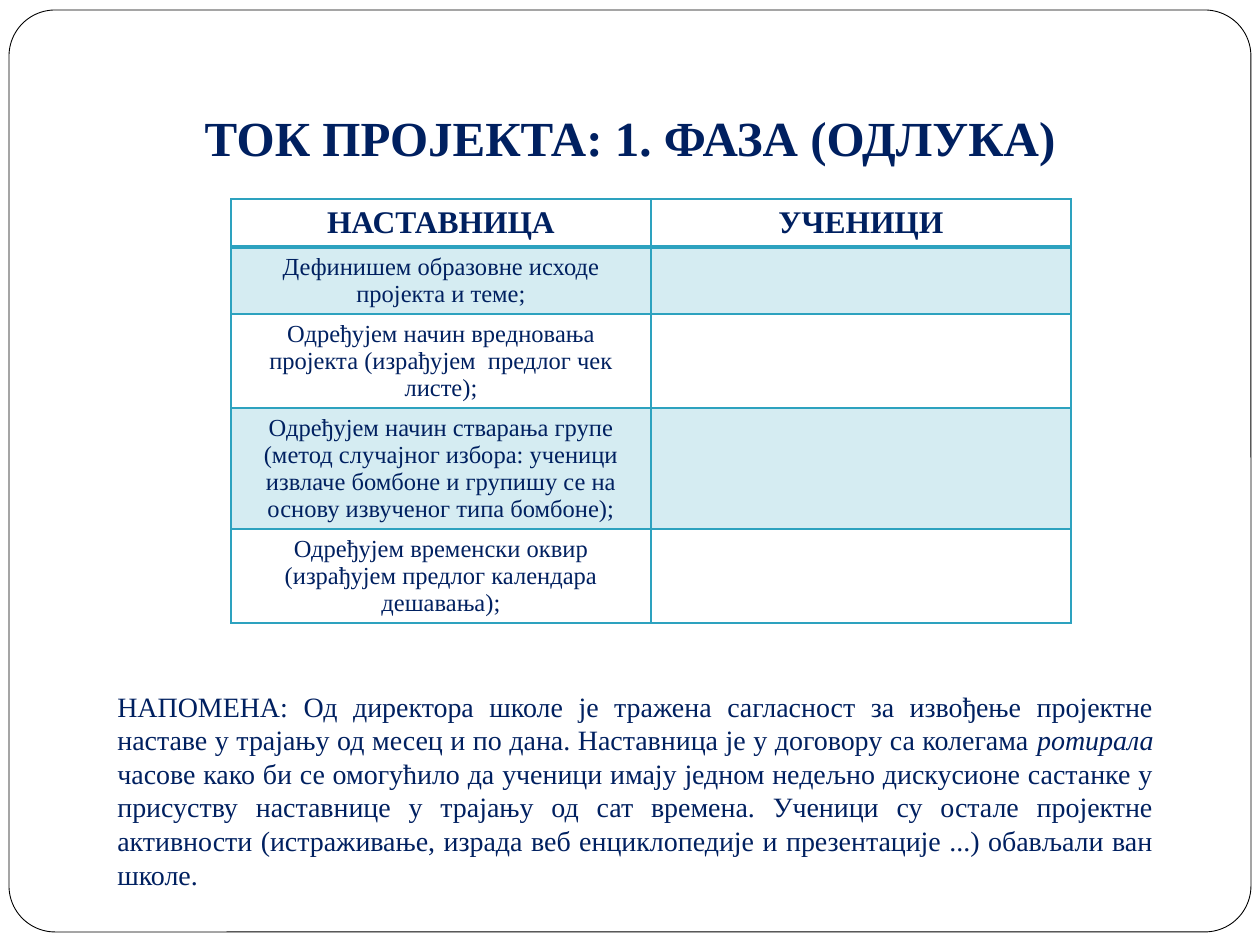
"""Build the slide on the decision phase of a school project."""
from dataclasses import dataclass

from lxml import etree
from pptx import Presentation
from pptx import util as u
from pptx.dml.color import RGBColor
from pptx.enum import shapes, text
from pptx.oxml.ns import qn

TITLE = "ТОК ПРОЈЕКТА: 1. ФАЗА (ОДЛУКА)"
HEADS = ["НАСТАВНИЦА", "УЧЕНИЦИ"]
TASKS = [
    "Дефинишем образовне исходе пројекта и теме;",
    "Одређујем начин вредновања пројекта (израђујем  предлог чек листе);",
    "Одређујем начин стварања групе (метод случајног избора: ученици "
    "извлаче бомбоне и групишу се на основу извученог типа бомбоне);",
    "Одређујем временски оквир (израђујем предлог календара дешавања);",
]
NOTE = [
    ("НАПОМЕНА: Од директора школе је тражена сагласност за извођење "
     "пројектне наставе у трајању од месец и по дана. Наставница је у "
     "договору са колегама ", False),
    ("ротирала ", True),
    ("часове како би се омогућило да ученици имају једном недељно "
     "дискусионе састанке у присуству наставнице у трајању од сат времена. "
     "Ученици су остале пројектне активности (истраживање, израда веб "
     "енциклопедије и презентације ...) обављали ван школе.", False),
]
HEIGHTS = [48, 67, 94, 120, 94]
FRAME = (9, 10, 1242, 922)
HEAD = (63, 38, 1134, 141)
GRID = (231, 199, 840, sum(HEIGHTS))
FOOT = (105, 683, 1061, 217)


@dataclass(frozen=True)
class Theme:
    font: str = "Times New Roman"
    ink: str = "002060"
    teal: str = "2DA2BF"
    paper: str = "FFFFFF"
    edge: str = "000000"
    title: int = 28
    head: int = 18
    body: int = 14
    note: int = 16


T = Theme()


def px(n):
    return u.Emu(round(n * 914400 / 126))


def box(spot):
    return [px(n) for n in spot]


def style(para, size, align, bold=False):
    para.alignment = align
    font = para.font
    font.name, font.size, font.bold = T.font, u.Pt(size), bold
    font.color.rgb = RGBColor.from_string(T.ink)


def tint(cell):
    cell.fill.solid()
    cell.fill.fore_color.rgb = RGBColor.from_string(T.teal)
    color = cell._tc.tcPr.find(".//" + qn("a:srgbClr"))
    etree.SubElement(color, qn("a:alpha"), val="20000")


def border(cell, widths):
    for i, (side, width) in enumerate(widths.items()):
        line = etree.Element(qn("a:ln" + side), w=str(u.Pt(width)))
        fill = etree.SubElement(line, qn("a:solidFill"))
        etree.SubElement(fill, qn("a:srgbClr"), val=T.teal)
        cell._tc.get_or_add_tcPr().insert(i, line)


def add_frame(slide):
    frame = slide.shapes.add_shape(
        shapes.MSO_SHAPE.ROUNDED_RECTANGLE, *box(FRAME))
    frame.adjustments[0] = 0.05
    frame.shadow.inherit = False
    frame.fill.solid()
    frame.fill.fore_color.rgb = RGBColor.from_string(T.paper)
    frame.line.color.rgb = RGBColor.from_string(T.edge)
    frame.line.width = u.Pt(0.5)
    slide.shapes._spTree.insert(2, frame._element)


def add_title(slide):
    title = slide.shapes.title
    title.left, title.top, title.width, title.height = box(HEAD)
    frame = title.text_frame
    frame.text = TITLE
    frame.auto_size = text.MSO_AUTO_SIZE.NONE
    frame.vertical_anchor = text.MSO_ANCHOR.BOTTOM
    frame.margin_bottom = u.Inches(0.1)
    style(frame.paragraphs[0], T.title, text.PP_ALIGN.CENTER, True)


def add_grid(slide):
    rows = [HEADS] + [[task, ""] for task in TASKS]
    table = slide.shapes.add_table(len(rows), len(HEADS), *box(GRID)).table
    table.horz_banding = False
    for r, row in enumerate(rows):
        table.rows[r].height = px(HEIGHTS[r])
        top = r == 0
        lines = {"L": 1, "R": 1, "T": 2 if r == 1 else 1, "B": 2 if top else 1}
        for c, words in enumerate(row):
            cell = table.cell(r, c)
            cell.text = words
            style(cell.text_frame.paragraphs[0], T.head if top else T.body,
                  text.PP_ALIGN.CENTER, top)
            if r % 2:
                tint(cell)
            else:
                cell.fill.background()
            border(cell, lines)


def add_note(slide):
    frame = slide.shapes.add_textbox(*box(FOOT)).text_frame
    frame.word_wrap = True
    para = frame.paragraphs[0]
    style(para, T.note, text.PP_ALIGN.JUSTIFY)
    for words, slant in NOTE:
        run = para.add_run()
        run.text = words
        run.font.italic = slant


def main():
    deck = Presentation()
    deck.slide_width, deck.slide_height = px(1260), px(945)
    slide = deck.slides.add_slide(deck.slide_layouts[5])
    add_frame(slide)
    add_title(slide)
    add_grid(slide)
    add_note(slide)
    deck.save("out.pptx")


if __name__ == "__main__":
    main()
